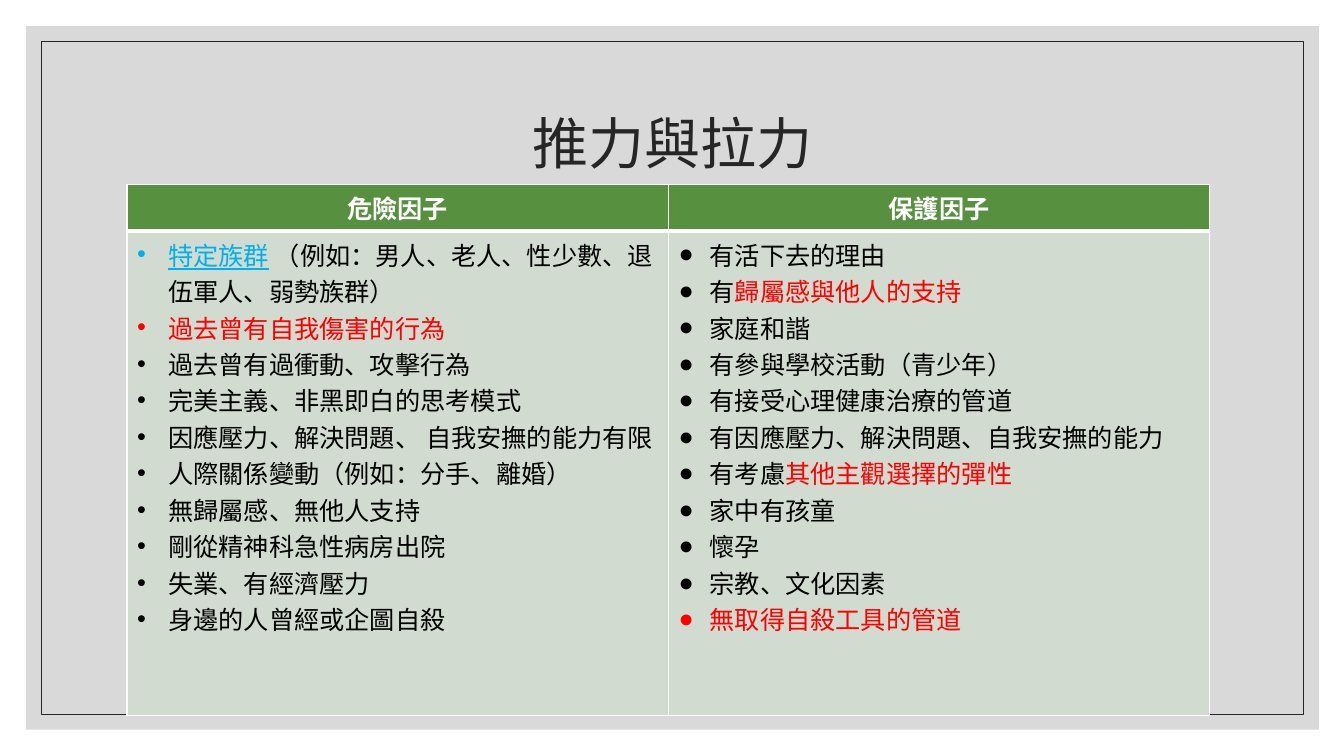
"""Build a slide with a table of risk factors and protective factors."""
from lxml.etree import SubElement
from pptx import Presentation
from pptx.dml.color import RGBColor
from pptx.enum.shapes import MSO_SHAPE
from pptx.enum.text import MSO_ANCHOR, PP_ALIGN
from pptx.oxml import parse_xml
from pptx.oxml.ns import nsdecls, qn
from pptx.util import Pt

PX = 9144
FONT = "Noto Sans CJK SC"
WHITE = RGBColor(0xFF, 0xFF, 0xFF)
BLACK = RGBColor(0, 0, 0)
DARK = RGBColor(0x26, 0x26, 0x26)
GRAY = RGBColor(0xD9, 0xD9, 0xD9)
GREEN = RGBColor(0x57, 0x90, 0x3F)
PALE = RGBColor(0xD1, 0xDB, 0xCF)
RED = RGBColor(0xFF, 0, 0)
BLUE = RGBColor(0, 0xB0, 0xF0)

HEADS = ["危險因子", "保護因子"]
RISKS = [
    [("特定族群", BLUE), (" （例如：男人、老人、性少數、退伍軍人、弱勢族群）", BLACK)],
    [("過去曾有自我傷害的行為", RED)],
    [("過去曾有過衝動、攻擊行為", BLACK)],
    [("完美主義、非黑即白的思考模式", BLACK)],
    [("因應壓力、解決問題、 自我安撫的能力有限", BLACK)],
    [("人際關係變動（例如：分手、離婚）", BLACK)],
    [("無歸屬感、無他人支持", BLACK)],
    [("剛從精神科急性病房出院", BLACK)],
    [("失業、有經濟壓力", BLACK)],
    [("身邊的人曾經或企圖自殺", BLACK)],
]
GUARDS = [
    [("有活下去的理由", BLACK)],
    [("有", BLACK), ("歸屬感與他人的支持", RED)],
    [("家庭和諧", BLACK)],
    [("有參與學校活動（青少年）", BLACK)],
    [("有接受心理健康治療的管道", BLACK)],
    [("有因應壓力、解決問題、自我安撫的能力", BLACK)],
    [("有考慮", BLACK), ("其他主觀選擇的彈性", RED)],
    [("家中有孩童", BLACK)],
    [("懷孕", BLACK)],
    [("宗教、文化因素", BLACK)],
    [("無取得自殺工具的管道", RED)],
]


def write(para, text, size, color, bold=False):
    run = para.add_run()
    run.text = text
    font = run.font
    font.size = Pt(size)
    font.bold = bold
    font.underline = color == BLUE
    font.color.rgb = color
    font.name = FONT
    SubElement(run._r.get_or_add_rPr(), qn("a:ea"), typeface=FONT)


def paint(cell, color, base):
    cell.fill.solid()
    cell.fill.fore_color.rgb = color
    props = cell._tc.get_or_add_tcPr()
    for i, (side, width) in enumerate([("L", 1), ("R", 1), ("T", 1), ("B", base)]):
        props.insert(i, parse_xml(
            f'<a:ln{side} {nsdecls("a")} w="{Pt(width)}"><a:solidFill>'
            f'<a:srgbClr val="{WHITE}"/></a:solidFill></a:ln{side}>'))


deck = Presentation()
deck.slide_width, deck.slide_height = 1333 * PX, 750 * PX
slide = deck.slides.add_slide(deck.slide_layouts[6])
shapes = slide.shapes

panel = shapes.add_shape(MSO_SHAPE.RECTANGLE, 26 * PX, 26 * PX, 1282 * PX, 698 * PX)
panel.shadow.inherit = False
panel.fill.solid()
panel.fill.fore_color.rgb = GRAY
panel.line.fill.background()

frame = shapes.add_shape(MSO_SHAPE.RECTANGLE, 41 * PX, 41 * PX, 1252 * PX, 668 * PX)
frame.shadow.inherit = False
frame.fill.background()
frame.line.color.rgb = DARK
frame.line.width = Pt(0.5)

title = shapes.add_textbox(117 * PX, 70 * PX, 1100 * PX, 150 * PX).text_frame
title.word_wrap = True
title.vertical_anchor = MSO_ANCHOR.MIDDLE
para = title.paragraphs[0]
para.alignment = PP_ALIGN.CENTER
para.line_spacing = 0.9
write(para, "推力與拉力", 40, DARK)

table = shapes.add_table(2, 2, 126 * PX, 183 * PX, 1074 * PX, 527 * PX).table
table.rows[0].height = 46 * PX
table.rows[1].height = 481 * PX

for col, (head, items, mark) in enumerate(zip(HEADS, [RISKS, GUARDS], "•●")):
    table.columns[col].width = 537 * PX
    top, body = table.cell(0, col), table.cell(1, col)
    paint(top, GREEN, 3)
    paint(body, PALE, 1)
    para = top.text_frame.paragraphs[0]
    para.alignment = PP_ALIGN.CENTER
    write(para, head, 18, WHITE, True)
    for row, parts in enumerate(items):
        text = body.text_frame
        para = text.add_paragraph() if row else text.paragraphs[0]
        props = para._p.get_or_add_pPr()
        props.set("marL", str(31 * PX))
        props.set("indent", str(-31 * PX))
        SubElement(props, qn("a:buFont"), typeface="Arial")
        SubElement(props, qn("a:buChar"), char=mark)
        for words, color in parts:
            write(para, words, 18, color)

deck.save("out.pptx")
